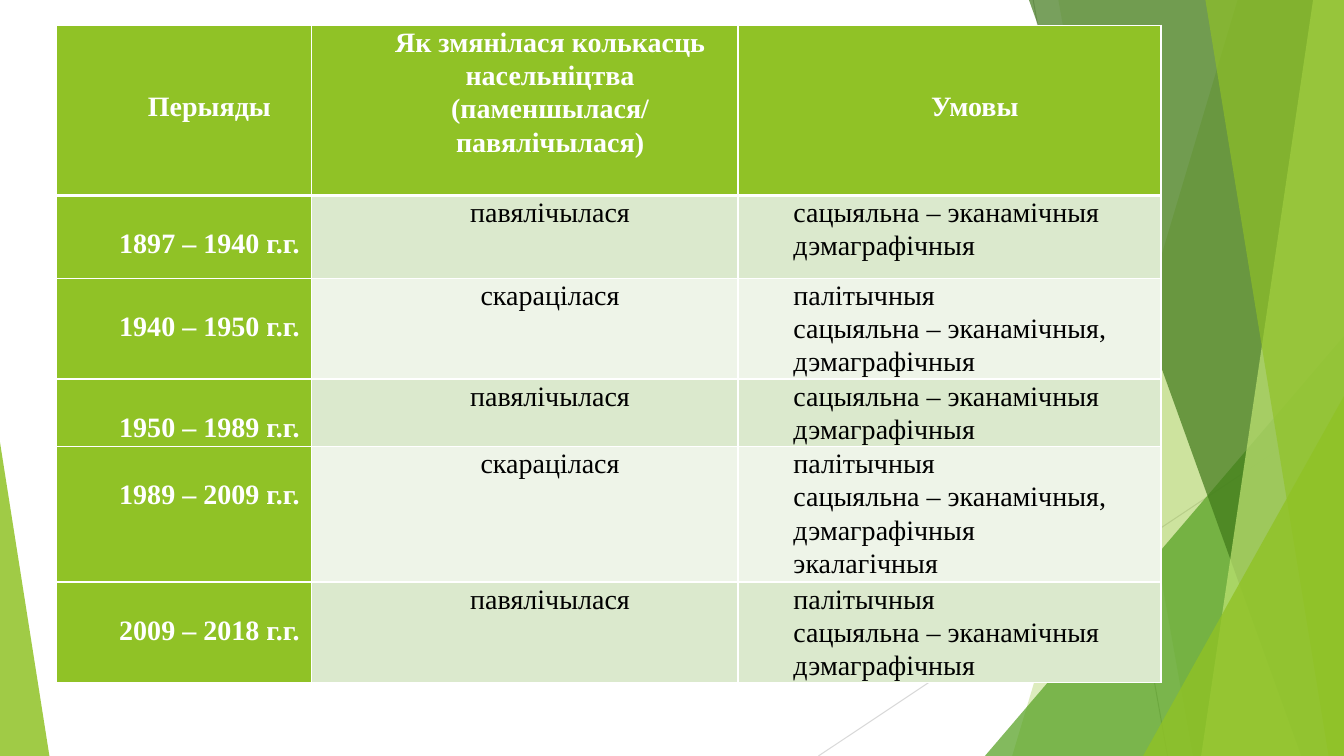
from dataclasses import dataclass

from lxml import etree
from pptx import Presentation
from pptx.dml.color import RGBColor
from pptx.enum.shapes import MSO_CONNECTOR, MSO_SHAPE
from pptx.enum.text import PP_ALIGN
from pptx.oxml.ns import qn
from pptx.util import Pt

STRAIGHT = MSO_CONNECTOR.STRAIGHT
TRIANGLE = MSO_SHAPE.ISOSCELES_TRIANGLE
CENTER, JUSTIFY = PP_ALIGN.CENTER, PP_ALIGN.JUSTIFY


@dataclass(frozen=True)
class Theme:
    font: str = "Times New Roman"
    size: float = 20
    line_spacing: float = 1.07
    white: str = "FFFFFF"
    black: str = "000000"
    lime: str = "90C226"
    green: str = "54A021"
    dark_green: str = "3F7819"
    pale_lime: str = "C0E474"
    bands: tuple = ("DBE9CD", "EEF4E8")
    gray: str = "BFBFBF"
    light_gray: str = "D9D9D9"


THEME = Theme()
WIDTH, HEIGHT = 960, 540

GROWN, SHRUNK = "павялічылася", "скарацілася"
POLITICAL, DEMOGRAPHIC = "палітычныя", "дэмаграфічныя"
SOCIAL, ECOLOGICAL = "сацыяльна – эканамічныя", "экалагічныя"

HEADERS = [
    ("Перыяды", 46),
    ("Як змянілася колькасць насельніцтва (паменшылася/ павялічылася)", 0),
    ("Умовы", 46),
]
PERIODS = [
    ("1897 – 1940 г.г.", GROWN, [SOCIAL, DEMOGRAPHIC]),
    ("1940 – 1950 г.г.", SHRUNK, [POLITICAL, SOCIAL + ",", DEMOGRAPHIC]),
    ("1950 – 1989 г.г.", GROWN, [SOCIAL, DEMOGRAPHIC]),
    ("1989 – 2009 г.г.", SHRUNK,
     [POLITICAL, SOCIAL + ",", DEMOGRAPHIC, ECOLOGICAL]),
    ("2009 – 2018 г.г.", GROWN, [POLITICAL, SOCIAL, DEMOGRAPHIC]),
]
COLUMN_WIDTHS = [182.2, 304.5, 302.2]
ROW_HEIGHTS = [121.6, 59.2, 72, 48.2, 96.8, 72]


def rgb(color):
    return RGBColor.from_string(color)


def paint(sp, color, opacity):
    """Fill a shape with a see-through colour and no outline."""
    sp.shadow.inherit = False
    sp.fill.solid()
    sp.fill.fore_color.rgb = rgb(color)
    sp.line.fill.background()
    clr = sp._element.spPr.find(qn("a:solidFill")).find(qn("a:srgbClr"))
    etree.SubElement(clr, qn("a:alpha")).set("val", str(opacity * 1000))


def add_thin_line(slide, x1, y1, x2, y2, color):
    line = slide.shapes.add_connector(STRAIGHT, Pt(x1), Pt(y1), Pt(x2), Pt(y2))
    line.line.color.rgb = rgb(color)
    line.line.width = Pt(0.75)
    etree.SubElement(line._element.spPr, qn("a:effectLst"))


def add_facet(slide, top_x, bottom_x, color, opacity):
    """Full-height band from a slanted left side to the right slide edge."""
    builder = slide.shapes.build_freeform(Pt(top_x), 0)
    builder.add_line_segments(
        [(Pt(WIDTH), 0), (Pt(WIDTH), Pt(HEIGHT)), (Pt(bottom_x), Pt(HEIGHT))])
    paint(builder.convert_to_shape(), color, opacity)


def add_corner(slide, left, top, width, apex, color, opacity):
    """Triangle standing on the bottom edge; apex 0 is left, 1 is right."""
    sp = slide.shapes.add_shape(
        TRIANGLE, Pt(left), Pt(top), Pt(width), Pt(HEIGHT - top))
    sp.adjustments[0] = apex
    paint(sp, color, opacity)


def add_backdrop(slide):
    add_thin_line(slide, 738, 0, 834, HEIGHT, THEME.gray)
    add_thin_line(slide, WIDTH, 290, 584.6, HEIGHT, THEME.light_gray)
    add_facet(slide, 884, 723, THEME.lime, 30)
    add_facet(slide, 756, 852, THEME.lime, 20)
    add_corner(slide, 703.5, 240, 256.5, 1, THEME.green, 72)
    add_facet(slide, 735, 929.5, THEME.dark_green, 70)
    add_facet(slide, 938, 858, THEME.pale_lime, 70)
    add_facet(slide, 861, 949, THEME.lime, 65)
    add_corner(slide, 816.5, 283, 143.5, 1, THEME.lime, 80)
    add_corner(slide, 0, 316, 35.3, 0, THEME.lime, 85)


def set_borders(cell, top, bottom):
    tc_pr = cell._tc.get_or_add_tcPr()
    for side, width in (("L", 1), ("R", 1), ("T", top), ("B", bottom)):
        ln = etree.SubElement(tc_pr, qn("a:ln" + side), w=str(Pt(width)))
        fill = etree.SubElement(ln, qn("a:solidFill"))
        etree.SubElement(fill, qn("a:srgbClr"), val=THEME.white)


def fill_cell(cell, lines, fill, heading=False, align=CENTER, inset=0):
    cell.fill.solid()
    cell.fill.fore_color.rgb = rgb(fill)
    cell.margin_left = cell.margin_right = Pt(3.6)
    cell.margin_top, cell.margin_bottom = Pt(inset), 0
    tf = cell.text_frame
    for i, text in enumerate(lines):
        p = tf.add_paragraph() if i else tf.paragraphs[0]
        p.alignment = align
        p.line_spacing = THEME.line_spacing
        p._p.get_or_add_pPr().set("marL", str(Pt(36)))
        r = p.add_run()
        r.text = text
        r.font.name = THEME.font
        r.font.size = Pt(THEME.size)
        r.font.bold = heading
        r.font.color.rgb = rgb(THEME.white if heading else THEME.black)


def add_period_table(slide):
    table = slide.shapes.add_table(
        len(ROW_HEIGHTS), len(COLUMN_WIDTHS), Pt(40.5), Pt(18),
        Pt(sum(COLUMN_WIDTHS)), Pt(sum(ROW_HEIGHTS))).table
    for column, width in zip(table.columns, COLUMN_WIDTHS):
        column.width = Pt(width)
    for i, (row, height) in enumerate(zip(table.rows, ROW_HEIGHTS)):
        row.height = Pt(height)
        for cell in row.cells:
            set_borders(cell, 3 if i == 1 else 1, 3 if i == 0 else 1)
    for cell, (title, inset) in zip(table.rows[0].cells, HEADERS):
        fill_cell(cell, [title], THEME.lime, heading=True, inset=inset)
    for i, (period, change, conditions) in enumerate(PERIODS):
        band = THEME.bands[i % 2]
        first, second, third = table.rows[i + 1].cells
        fill_cell(first, [period], THEME.lime, heading=True, inset=22)
        fill_cell(second, [change], band)
        fill_cell(third, conditions, band, align=JUSTIFY)


def main():
    prs = Presentation()
    prs.slide_width, prs.slide_height = Pt(WIDTH), Pt(HEIGHT)
    slide = prs.slides.add_slide(prs.slide_layouts[6])
    add_backdrop(slide)
    add_period_table(slide)
    prs.save("out.pptx")


if __name__ == "__main__":
    main()
